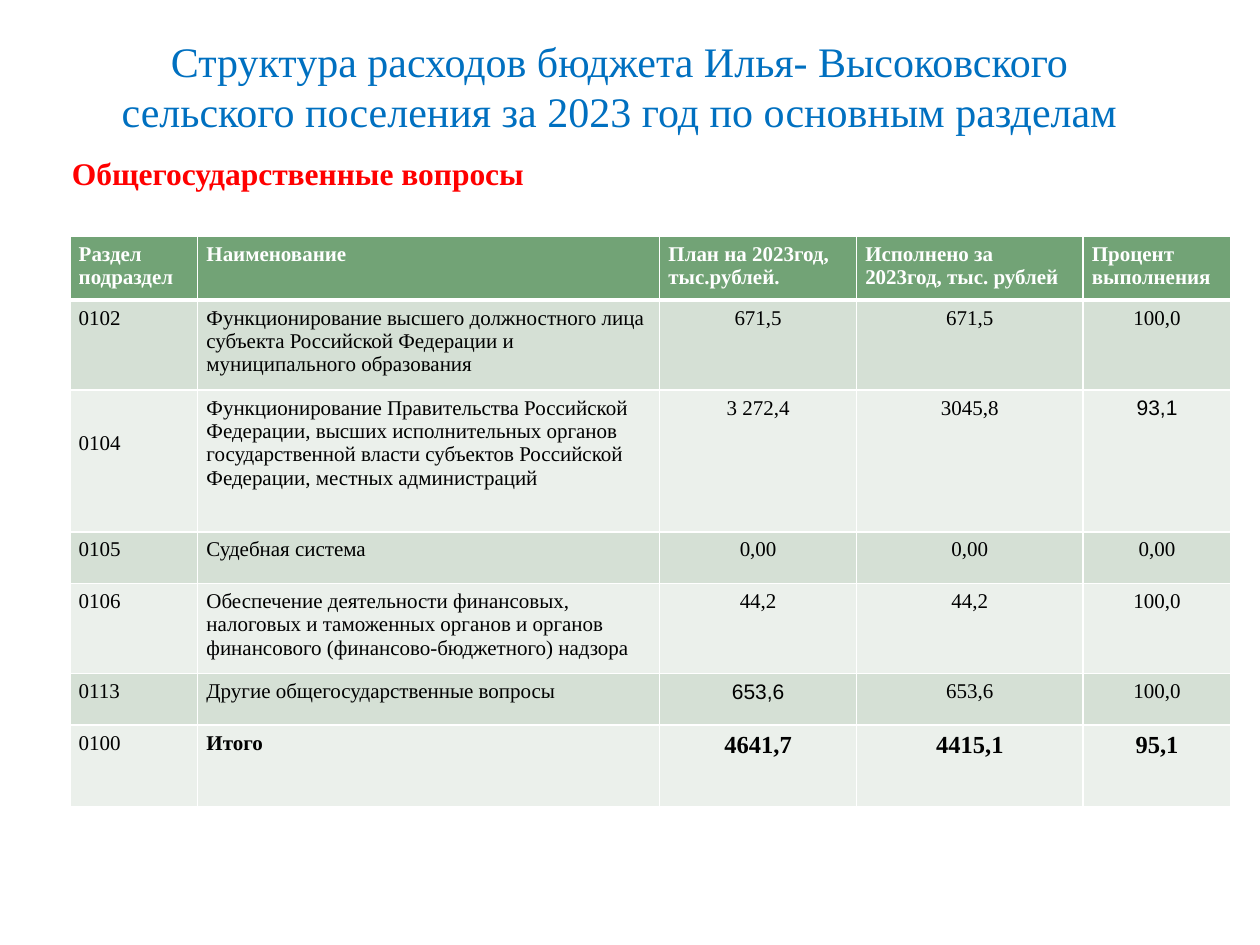
from dataclasses import dataclass

from lxml import etree
from pptx import Presentation
from pptx.dml.color import RGBColor
from pptx.enum.text import MSO_ANCHOR, PP_ALIGN
from pptx.oxml.ns import qn
from pptx.util import Pt

LEFT, CENTER = PP_ALIGN.LEFT, PP_ALIGN.CENTER
MIDDLE = MSO_ANCHOR.MIDDLE
BLUE = RGBColor(0x00, 0x70, 0xC0)
RED = RGBColor(0xFF, 0x00, 0x00)
WHITE = RGBColor(0xFF, 0xFF, 0xFF)
BLACK = RGBColor(0x00, 0x00, 0x00)
HEADER_GREEN = RGBColor(0x72, 0xA3, 0x76)
BANDS = (RGBColor(0xD5, 0xE0, 0xD5), RGBColor(0xEB, 0xF0, 0xEB))
SERIF, SANS = "Times New Roman", "Arial"
THIN, THICK = Pt(0.96), Pt(3)
TITLE_ONLY = 5


@dataclass
class BudgetRow:
    cells: tuple[str, ...]
    height: float
    sans_column: int | None = None
    code_top: float = 3.6
    total: bool = False


HEADER = BudgetRow(("Раздел подраздел", "Наименование", "План на 2023год, тыс.рублей.",
                    "Исполнено за 2023год, тыс. рублей", "Процент\nвыполнения"), 36.5)
ROWS = [
    BudgetRow(("0102", "Функционирование высшего должностного лица субъекта "
               "Российской Федерации и муниципального образования",
               "671,5", "671,5", "100,0"), 51.5),
    BudgetRow(("0104", "Функционирование Правительства Российской Федерации, высших "
               "исполнительных органов государственной власти субъектов "
               "Российской Федерации, местных администраций",
               "3 272,4", "3045,8", "93,1"), 81, sans_column=4, code_top=24),
    BudgetRow(("0105", "Судебная система", "0,00", "0,00", "0,00"), 29.5),
    BudgetRow(("0106", "Обеспечение деятельности финансовых, налоговых и таможенных "
               "органов и органов финансового (финансово-бюджетного) надзора",
               "44,2", "44,2", "100,0"), 51.5),
    BudgetRow(("0113", "Другие общегосударственные вопросы",
               "653,6", "653,6", "100,0"), 29.5, sans_column=2),
    BudgetRow(("0100", "Итого", "4641,7", "4415,1", "95,1"), 46.5, total=True),
]
COLUMN_WIDTHS = (73, 264, 112.5, 129.5, 84.5)


def write(tf, text: str, align, color: RGBColor, **font) -> None:
    tf.text = text
    for p in tf.paragraphs:
        p.alignment = align
        for r in p.runs:
            r.font.color.rgb = color
            for name, value in font.items():
                setattr(r.font, name, value)


def place(sp, left: float, top: float, width: float, height: float) -> None:
    box = {"left": left, "top": top, "width": width, "height": height}
    for name, value in box.items():
        setattr(sp, name, Pt(value))


def add_borders(cell, top: int, bottom: int) -> None:
    tc_pr = cell._tc.get_or_add_tcPr()
    for tag, width in (("lnL", THIN), ("lnR", THIN), ("lnT", top), ("lnB", bottom)):
        line = etree.SubElement(tc_pr, qn(f"a:{tag}"), w=str(int(width)))
        fill = etree.SubElement(line, qn("a:solidFill"))
        etree.SubElement(fill, qn("a:srgbClr"), val=str(WHITE))


def fill_row(table, index: int, row: BudgetRow) -> None:
    table.rows[index].height = Pt(row.height)
    is_header = index == 0
    for col, text in enumerate(row.cells):
        cell = table.cell(index, col)
        add_borders(cell, THICK if index == 1 else THIN, THICK if is_header else THIN)
        cell.fill.solid()
        cell.fill.fore_color.rgb = HEADER_GREEN if is_header else BANDS[(index - 1) % 2]
        cell.margin_left = cell.margin_right = Pt(5)
        cell.margin_top = Pt(row.code_top if col == 0 else 3.6)
        is_value = col >= 2 and not is_header
        write(cell.text_frame, text, CENTER if is_value else LEFT,
              WHITE if is_header else BLACK,
              name=SANS if col == row.sans_column else SERIF,
              size=Pt(14 if row.total and is_value else 12),
              bold=is_header or (row.total and col > 0))


def main() -> None:
    prs = Presentation()
    prs.slide_width, prs.slide_height = Pt(720), Pt(540)
    s = prs.slides.add_slide(prs.slide_layouts[TITLE_ONLY])

    # Title
    title = s.shapes.title
    place(title, 56, 16.5, 596, 65)
    title.text_frame.vertical_anchor = MIDDLE
    write(title.text_frame, "Структура расходов бюджета Илья- Высоковского сельского "
          "поселения за 2023 год по основным разделам", CENTER, BLUE,
          name=SERIF, size=Pt(24))

    # Expenditure table
    rows = [HEADER, *ROWS]
    table = s.shapes.add_table(len(rows), len(COLUMN_WIDTHS), Pt(40), Pt(135),
                               Pt(sum(COLUMN_WIDTHS)),
                               Pt(sum(row.height for row in rows))).table
    for column, width in zip(table.columns, COLUMN_WIDTHS):
        column.width = Pt(width)
    for index, row in enumerate(rows):
        fill_row(table, index, row)

    # Section heading
    heading = s.shapes.add_textbox(Pt(34), Pt(84.5), Pt(376.5), Pt(29))
    heading.text_frame.word_wrap = True
    write(heading.text_frame, "Общегосударственные вопросы", LEFT, RED,
          name=SERIF, size=Pt(18), bold=True)

    prs.save("out.pptx")


if __name__ == "__main__":
    main()
